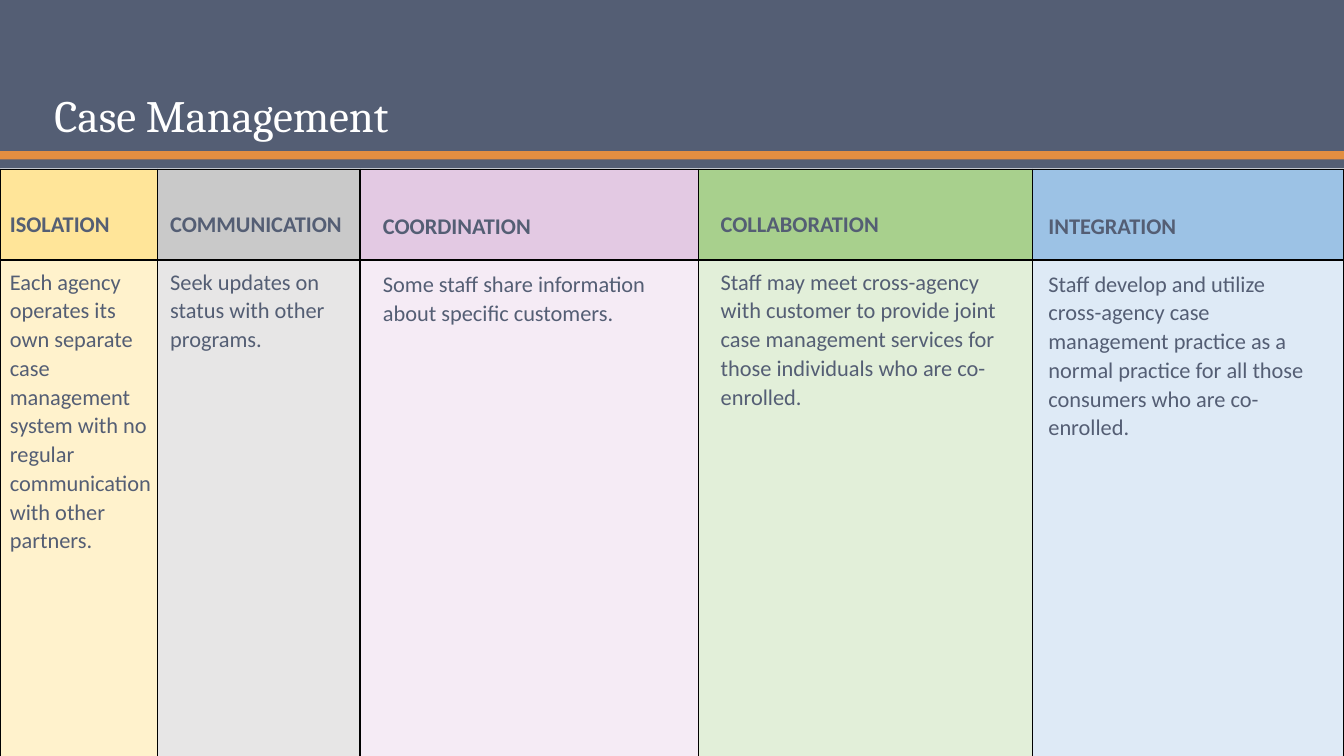
from lxml.etree import SubElement
from pptx import Presentation
from pptx.dml.color import RGBColor
from pptx.enum.shapes import MSO_SHAPE
from pptx.enum.text import MSO_ANCHOR, PP_ALIGN
from pptx.oxml.ns import qn
from pptx.util import Inches, Pt

THEME = {
    "slate": RGBColor.from_string("545E74"),
    "orange": RGBColor.from_string("E38E41"),
    "white": RGBColor.from_string("FFFFFF"),
    "border": "000000",
    "title_font": "Cambria",
    "text_font": "Calibri",
    "title_size": Pt(32),
    "text_size": Pt(16),
    "heading_gap": Pt(20.5),
}

STAGES = [
    {"heading": "ISOLATION", "fills": ("FFE599", "FFF2CC"), "column": 1.56,
     "box": (0, 2.02, 1.71, 4.31),
     "text": "Each agency operates its\vown separate case management system "
             "with no regular communication with other partners."},
    {"heading": "COMMUNICATION", "fills": ("C9C9C9", "E7E6E6"), "column": 2.01,
     "box": (1.59, 2.02, 1.96, 4.31),
     "text": "Seek updates on status with other programs."},
    {"heading": "COORDINATION", "fills": ("E3C9E3", "F5EBF5"), "column": 3.36,
     "box": (3.7, 2.04, 3.1, 4.31),
     "text": "Some staff share information about specific customers."},
    {"heading": "COLLABORATION", "fills": ("A8D08D", "E2EFD9"), "column": 3.31,
     "box": (7.05, 2.02, 3.11, 5.1),
     "text": "Staff may meet cross-agency with customer to provide joint case "
             "management services for those individuals who are co-enrolled."},
    {"heading": "INTEGRATION", "fills": ("9CC2E5", "DEEAF6"), "column": 3.09,
     "box": (10.3, 2.04, 2.91, 5.1),
     "text": "Staff develop and utilize cross-agency case management practice as a "
             "normal practice for all those consumers who are co-enrolled."},
]


def format_font(font, color, values):
    for name, value in values.items():
        setattr(font, name, value)
    font.color.rgb = color


def add_borders(cell):
    properties = cell._tc.get_or_add_tcPr()
    for index, side in enumerate(("a:lnL", "a:lnR", "a:lnT", "a:lnB")):
        line = properties.makeelement(qn(side), {"w": str(Pt(1))})
        properties.insert(index, line)
        fill = SubElement(line, qn("a:solidFill"))
        SubElement(fill, qn("a:srgbClr"), val=THEME["border"])


deck = Presentation()
deck.slide_width = Inches(13.33)
deck.slide_height = Inches(7.5)
page = deck.slides.add_slide(deck.slide_layouts[5])

for top, height, color in ((0, 1.5, "slate"), (1.5, 0.09, "orange"), (1.58, 0.09, "slate")):
    band = page.shapes.add_shape(
        MSO_SHAPE.RECTANGLE, 0, Inches(top), deck.slide_width, Inches(height))
    band.shadow.inherit = False
    band.fill.solid()
    band.fill.fore_color.rgb = THEME[color]
    band.line.fill.background()

title = page.shapes.title
title.element.getparent().append(title.element)
for name, value in {"left": 0.44, "top": 0.33, "width": 11.48, "height": 1.13}.items():
    setattr(title, name, Inches(value))
title.text_frame.text = "Case Management"
title.text_frame.vertical_anchor = MSO_ANCHOR.BOTTOM
para = title.text_frame.paragraphs[0]
para.alignment = PP_ALIGN.LEFT
para.line_spacing = 0.9
format_font(para.runs[0].font, THEME["white"],
            {"name": THEME["title_font"], "size": THEME["title_size"]})

table = page.shapes.add_table(
    2, len(STAGES), 0, Inches(1.68), deck.slide_width, Inches(5.84)).table
table.horz_banding = False
for row, height in zip(table.rows, (0.9, 4.94)):
    row.height = Inches(height)

for column, stage in enumerate(STAGES):
    table.columns[column].width = Inches(stage["column"])
    for row, fill in enumerate(stage["fills"]):
        cell = table.cell(row, column)
        cell.fill.solid()
        cell.fill.fore_color.rgb = RGBColor.from_string(fill)
        add_borders(cell)

    box = page.shapes.add_textbox(*(Inches(value) for value in stage["box"]))
    box.text_frame.word_wrap = True
    heading = box.text_frame.paragraphs[0]
    body = box.text_frame.add_paragraph()
    body.space_before = THEME["heading_gap"]
    for para, text, bold in ((heading, stage["heading"], True), (body, stage["text"], False)):
        para.text = text
        para.line_spacing = 1.07
        for span in para.runs:
            format_font(span.font, THEME["slate"],
                        {"name": THEME["text_font"], "size": THEME["text_size"], "bold": bold})

deck.save("out.pptx")
